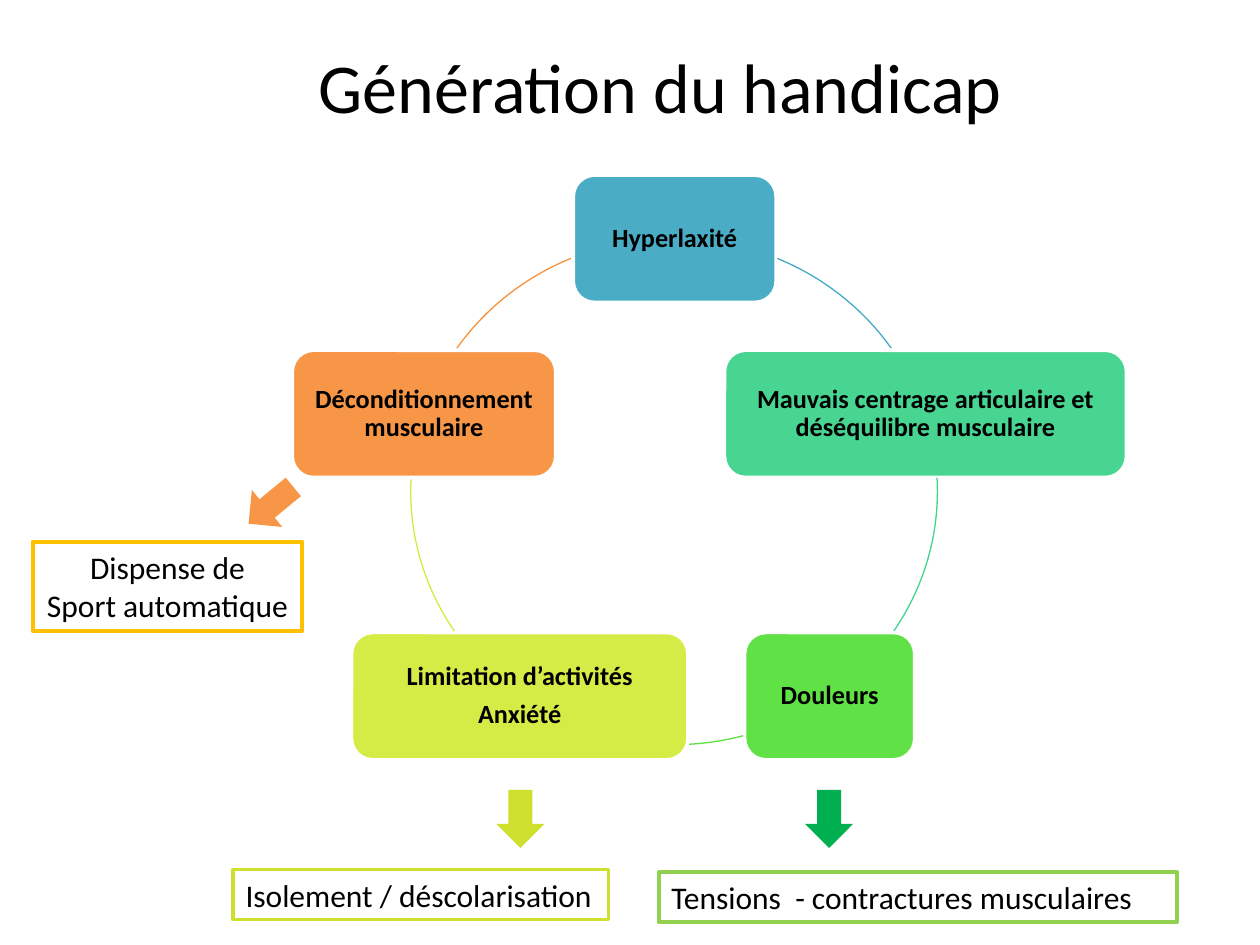
from pptx import Presentation
from pptx.dml.color import RGBColor
from pptx.enum import shapes, text
from pptx.util import Inches, Pt

BLACK = RGBColor(0x00, 0x00, 0x00)
WHITE = RGBColor(0xFF, 0xFF, 0xFF)
BLUE = RGBColor(0x4B, 0xAC, 0xC6)
TEAL = RGBColor(0x48, 0xD4, 0x91)
GREEN = RGBColor(0x60, 0xE1, 0x46)
LIME = RGBColor(0xD5, 0xEC, 0x46)
ORANGE = RGBColor(0xF7, 0x96, 0x46)
DARK_GREEN = RGBColor(0x00, 0xB0, 0x50)
DARK_LIME = RGBColor(0xCE, 0xDF, 0x2D)
LIGHT_GREEN = RGBColor(0x92, 0xD0, 0x50)
GOLD = RGBColor(0xFF, 0xC0, 0x00)
BLUE_LINE = RGBColor(0x46, 0xAA, 0xC5)
TEAL_LINE = RGBColor(0x43, 0xD3, 0x8E)
GREEN_LINE = RGBColor(0x5B, 0xE0, 0x41)
LIME_LINE = RGBColor(0xD3, 0xEB, 0x40)
ORANGE_LINE = RGBColor(0xF6, 0x92, 0x40)

SHAPE = shapes.MSO_SHAPE
CENTER = text.PP_ALIGN.CENTER
LEFT = text.PP_ALIGN.LEFT


class CycleSlide:
    """Draws the elements of a cycle diagram in one style on one slide."""

    font_name = "Calibri"
    node_height = 1.01
    ring = (3.26, 1.89, 4.18, 4.02)

    def __init__(self, presentation):
        self.slide = presentation.slides.add_slide(presentation.slide_layouts[5])

    def style(self, paragraph, size, bold=False, align=CENTER):
        paragraph.alignment = align
        font = paragraph.font
        font.name, font.size, font.bold = self.font_name, Pt(size), bold
        font.color.rgb = BLACK

    def title(self, wording):
        title = self.slide.shapes.title
        title.left, title.top = Inches(0.5), Inches(0.13)
        title.width, title.height = Inches(9), Inches(1.1)
        frame = title.text_frame
        frame.text = wording
        frame.margin_left = Inches(0.58)
        frame.vertical_anchor = text.MSO_ANCHOR.MIDDLE
        self.style(frame.paragraphs[0], 40)

    def shape(self, kind, bounds, fill=None, line=None, line_width=2):
        shape = self.slide.shapes.add_shape(kind, *map(Inches, bounds))
        shape.shadow.inherit = False
        if fill is None:
            shape.fill.background()
        else:
            shape.fill.solid()
            shape.fill.fore_color.rgb = fill
        if line is None:
            shape.line.fill.background()
        else:
            shape.line.color.rgb = line
            shape.line.width = Pt(line_width)
        return shape

    def node(self, left, top, width, wording, fill):
        bounds = (left, top, width, self.node_height)
        frame = self.shape(SHAPE.ROUNDED_RECTANGLE, bounds, fill, WHITE).text_frame
        frame.text = wording
        frame.word_wrap = True
        frame.vertical_anchor = text.MSO_ANCHOR.MIDDLE
        frame.margin_left = frame.margin_right = Inches(0.06)
        frame.margin_top = frame.margin_bottom = Inches(0.06)
        for paragraph in frame.paragraphs:
            self.style(paragraph, 15, bold=True)
            paragraph.line_spacing = 0.9
            paragraph.space_after = Pt(5.25)

    def arc(self, start, end, color):
        arc = self.shape(SHAPE.ARC, self.ring, line=color, line_width=0.75)
        for index, degrees in enumerate((start, end)):
            arc.adjustments[index] = degrees * 0.6

    def arrow(self, left, top, rotation, fill):
        arrow = self.shape(SHAPE.RIGHT_ARROW, (left, top, 0.46, 0.38), fill)
        arrow.rotation = rotation

    def label(self, bounds, wording, line, fill=WHITE, line_width=2, align=LEFT, wrap=False):
        frame = self.shape(SHAPE.RECTANGLE, bounds, fill, line, line_width).text_frame
        frame.text = wording
        frame.word_wrap = wrap
        frame.auto_size = text.MSO_AUTO_SIZE.SHAPE_TO_FIT_TEXT
        frame.vertical_anchor = text.MSO_ANCHOR.TOP
        for paragraph in frame.paragraphs:
            self.style(paragraph, 18, align=align)


def main():
    presentation = Presentation()
    presentation.slide_width, presentation.slide_height = Inches(10), Inches(7.5)
    cycle = CycleSlide(presentation)
    cycle.title("Génération du handicap")

    steps = [
        (4.55, 1.39, 1.61, "Hyperlaxité", BLUE, 293.9, 326.6, BLUE_LINE),
        (5.75, 2.78, 3.19, "Mauvais centrage articulaire et déséquilibre musculaire",
         TEAL, 357, 32.5, TEAL_LINE),
        (5.91, 5.02, 1.35, "Douleurs", GREEN, 74.2, 86.6, GREEN_LINE),
        (2.79, 5.02, 2.67, "Limitation d’activités\nAnxiété", LIME, 147.5, 183, LIME_LINE),
        (2.32, 2.78, 2.09, "Déconditionnement musculaire", ORANGE, 213.4, 246.1, ORANGE_LINE),
    ]
    for left, top, width, wording, fill, start, end, line in steps:
        cycle.node(left, top, width, wording, fill)
        cycle.arc(start, end, line)

    cycle.arrow(6.35, 6.31, 90, DARK_GREEN)
    cycle.label((5.23, 6.92, 4.11, 0.4), "Tensions  - contractures musculaires",
                LIGHT_GREEN, wrap=True)
    cycle.label((1.85, 6.9, 2.98, 0.4), "Isolement / déscolarisation", DARK_LIME)
    cycle.arrow(1.92, 3.82, 140.6, ORANGE)
    cycle.arrow(3.9, 6.31, 90, DARK_LIME)
    cycle.label((0.26, 4.3, 2.14, 0.71), "Dispense de\nSport automatique", GOLD,
                fill=None, line_width=2.25, align=CENTER)
    presentation.save("out.pptx")


if __name__ == "__main__":
    main()
